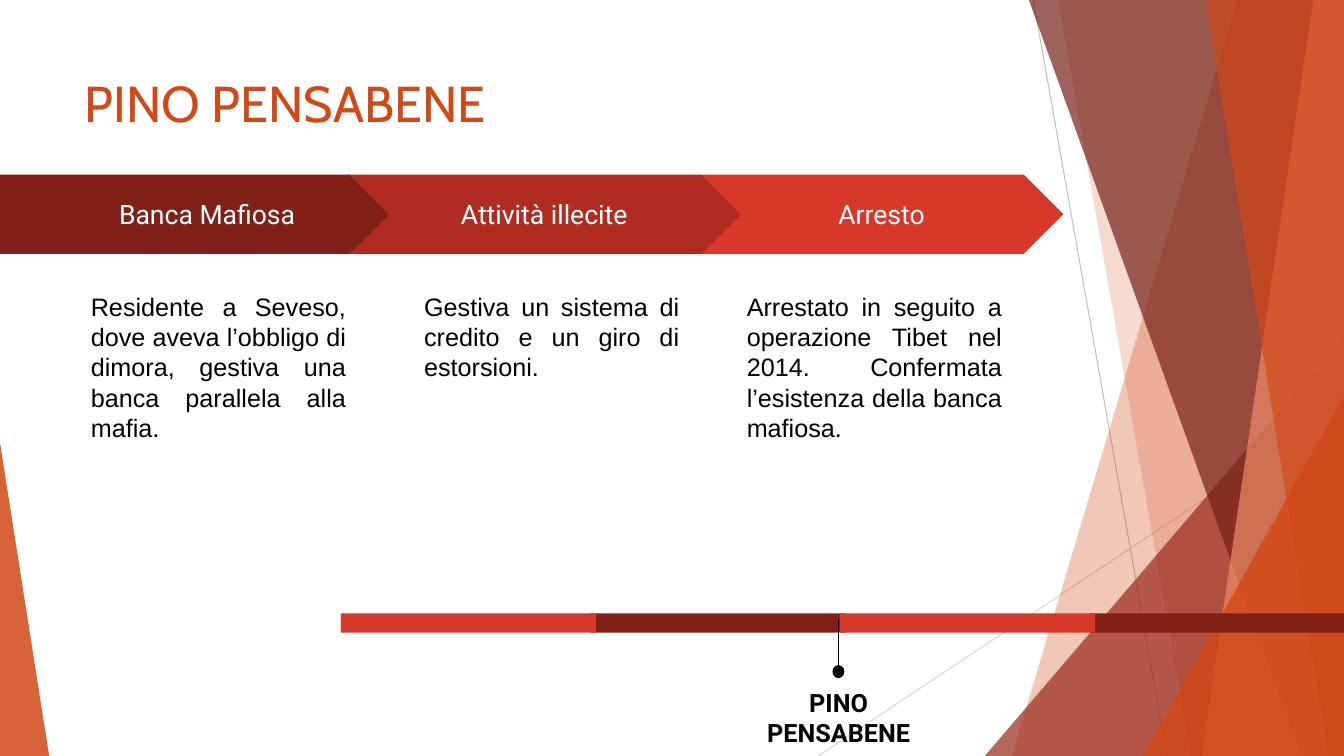
"""Build the Pino Pensabene slide: three stages over a timeline."""
from lxml.etree import SubElement
from pptx import Presentation
from pptx.dml.color import RGBColor
from pptx.enum.shapes import MSO_CONNECTOR, MSO_SHAPE
from pptx.enum.text import MSO_ANCHOR, PP_ALIGN
from pptx.oxml.ns import qn
from pptx.util import Cm, Pt

ORANGE = RGBColor(0xD3, 0x48, 0x17)
PEACH = RGBColor(0xEF, 0x8B, 0x67)
RUST = RGBColor(0x9B, 0x2D, 0x1F)
MAROON = RGBColor(0x74, 0x21, 0x17)
DARK_RED = RGBColor(0x80, 0x20, 0x17)
MID_RED = RGBColor(0xB0, 0x2C, 0x20)
RED = RGBColor(0xD8, 0x38, 0x29)
GRAY = RGBColor(0xBF, 0xBF, 0xBF)
LIGHT_GRAY = RGBColor(0xD8, 0xD8, 0xD8)
WHITE = RGBColor(0xFF, 0xFF, 0xFF)
BLACK = RGBColor(0, 0, 0)

WIDTH, HEIGHT = 33.87, 19.05
INSET = 0.33

NAME = "PINO PENSABENE"
STAGES = [
    ("Banca Mafiosa", DARK_RED, 0, 9.8, 1.96,
     "Residente a Seveso, dove aveva l’obbligo di dimora, gestiva una banca parallela alla mafia."),
    ("Attività illecite", MID_RED, 8.76, 9.91, 10.36,
     "Gestiva un sistema di credito e un giro di estorsioni."),
    ("Arresto", RED, 17.63, 9.17, 18.49,
     "Arrestato in seguito a operazione Tibet nel 2014. Confermata l’esistenza della banca mafiosa."),
]
HAIRLINES = [
    (26.04, 0, 29.41, HEIGHT, GRAY),
    (WIDTH, 10.24, 20.62, HEIGHT, LIGHT_GRAY),
]
BACK_FACETS = [(31.19, 25.5, ORANGE, 30), (26.67, 30.02, ORANGE, 20)]
FRONT_FACETS = [
    (25.93, 32.79, MAROON, 70),
    (33.1, 30.28, PEACH, 70),
    (30.38, 33.48, ORANGE, 65),
]
BACK_CORNER = (24.82, 8.46, 9.05, 1, RUST, 72)
FRONT_CORNERS = [(28.8, 9.98, 5.07, 1, ORANGE, 80), (0, 11.15, 1.24, 0, ORANGE, 85)]
BAR_LEFT, BAR_TOP, BAR_STEP, BAR_WIDTH, BAR_HEIGHT = 8.59, 15.46, 6.29, 6.43, 0.48
BAR_COLORS = [(1, DARK_RED), (3, DARK_RED), (2, RED), (0, RED)]

deck = Presentation()
deck.slide_width, deck.slide_height = Cm(WIDTH), Cm(HEIGHT)
slide = deck.slides.add_slide(deck.slide_layouts[6])
shapes = slide.shapes


def paint(part, color, opacity=100):
    part.shadow.inherit = False
    part.fill.solid()
    part.fill.fore_color.rgb = color
    part.line.fill.background()
    if opacity < 100:
        tint = part.fill._xPr.find(qn("a:solidFill"))[0]
        SubElement(tint, qn("a:alpha")).set("val", str(opacity * 1000))
    return part


def add_block(kind, left, top, width, height, color, opacity=100):
    block = shapes.add_shape(kind, Cm(left), Cm(top), Cm(width), Cm(height))
    return paint(block, color, opacity)


def add_facet(top_x, bottom_x, color, opacity):
    outline = shapes.build_freeform(Cm(top_x), 0)
    corners = [(WIDTH, 0), (WIDTH, HEIGHT), (bottom_x, HEIGHT)]
    outline.add_line_segments([(Cm(x), Cm(y)) for x, y in corners])
    paint(outline.convert_to_shape(), color, opacity)


def add_corner(left, top, width, apex, color, opacity):
    corner = add_block(MSO_SHAPE.ISOSCELES_TRIANGLE, left, top, width, HEIGHT - top, color, opacity)
    corner.adjustments[0] = apex


def add_hairline(x1, y1, x2, y2, color):
    hairline = shapes.add_connector(MSO_CONNECTOR.STRAIGHT, Cm(x1), Cm(y1), Cm(x2), Cm(y2))
    hairline.line.color.rgb = color
    hairline.line.width = Pt(0.75)
    SubElement(hairline._element.spPr, qn("a:effectLst"))


def write(part, text, size, font, color, align, inset=INSET):
    frame = part.text_frame
    frame.word_wrap = True
    frame.margin_left = frame.margin_right = frame.margin_top = frame.margin_bottom = Cm(inset)
    paragraph = frame.paragraphs[0]
    paragraph.text = text
    paragraph.alignment = align
    paragraph.font.size = Pt(size)
    paragraph.font.name = font
    paragraph.font.color.rgb = color
    return frame


def add_text(left, top, width, height, *style):
    return write(shapes.add_textbox(Cm(left), Cm(top), Cm(width), Cm(height)), *style)


for hairline_spec in HAIRLINES:
    add_hairline(*hairline_spec)
for facet in BACK_FACETS:
    add_facet(*facet)
add_corner(*BACK_CORNER)
for facet in FRONT_FACETS:
    add_facet(*facet)
for corner_spec in FRONT_CORNERS:
    add_corner(*corner_spec)

title = add_text(1.88, 1.7, 23.88, 3.66, NAME, 36, "Cabin", ORANGE, PP_ALIGN.LEFT, 0.25)
title.margin_top = Cm(0.13)

for heading, color, left, width, detail_left, detail in reversed(STAGES):
    first = left == 0
    kind = MSO_SHAPE.PENTAGON if first else MSO_SHAPE.CHEVRON
    arrow = add_block(kind, left, 4.4, width, 2, color)
    align = PP_ALIGN.LEFT if first else PP_ALIGN.CENTER
    label = write(arrow, heading, 19, "Roboto", WHITE, align)
    label.vertical_anchor = MSO_ANCHOR.MIDDLE
    if first:
        label.margin_left = Cm(3)
    add_text(detail_left, 7.01, 7.09, 7.85, detail, 18, "Arial", BLACK, PP_ALIGN.JUSTIFY)

for position, color in BAR_COLORS:
    add_block(MSO_SHAPE.RECTANGLE, BAR_LEFT + position * BAR_STEP, BAR_TOP, BAR_WIDTH, BAR_HEIGHT, color)

marker = add_text(18.85, 16.99, 4.57, 2.18, NAME, 18, "Roboto", BLACK, PP_ALIGN.CENTER)
marker.paragraphs[0].font.bold = True
add_hairline(21.13, 17, 21.13, 15.6, BLACK)
add_block(MSO_SHAPE.OVAL, 20.98, 16.76, 0.3, 0.33, BLACK)

deck.save("out.pptx")
